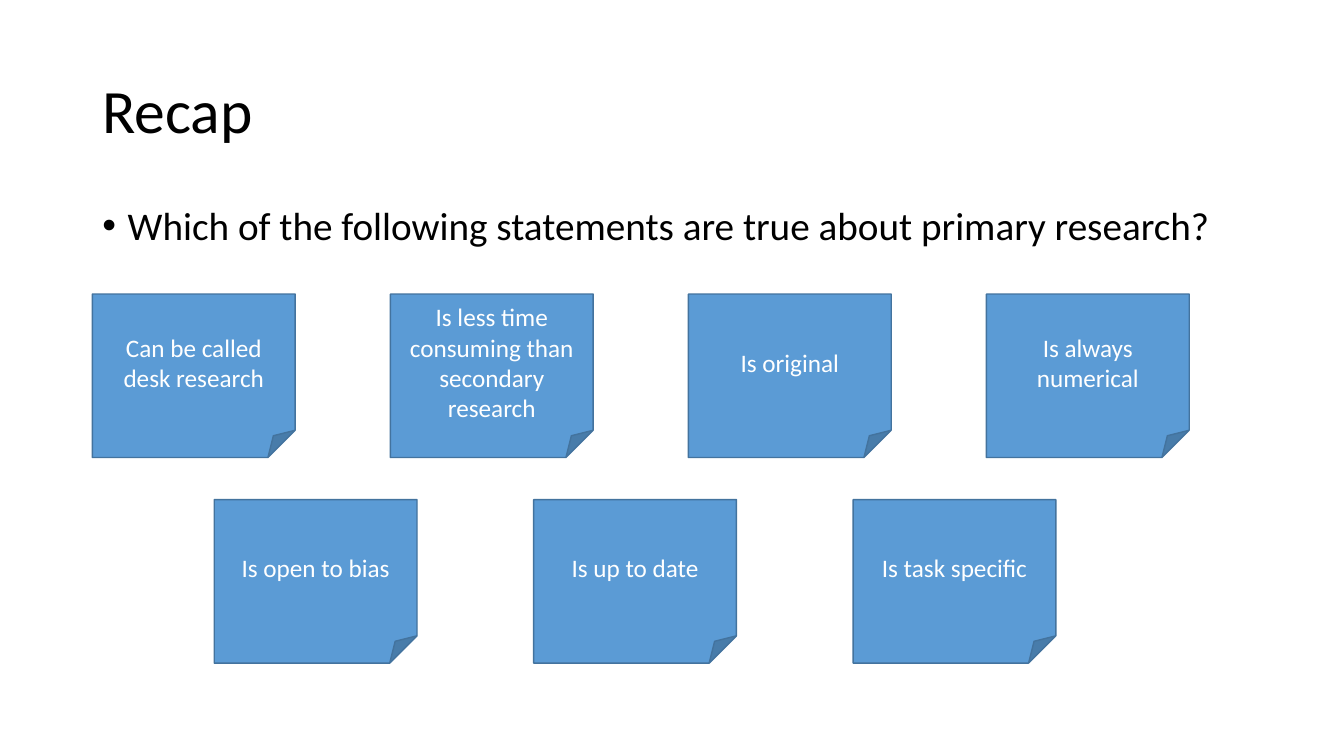
from lxml import etree
from pptx import Presentation
from pptx.dml.color import RGBColor
from pptx.enum import shapes, text
from pptx.oxml.ns import qn
from pptx.util import Cm, Pt

FONT = "Calibri"
BLACK = RGBColor(0x00, 0x00, 0x00)
WHITE = RGBColor(0xFF, 0xFF, 0xFF)
NOTE_BLUE = RGBColor(0x5B, 0x9B, 0xD5)
NOTE_EDGE = RGBColor(0x43, 0x73, 0x9E)

MARGIN = 2.33
CONTENT_WIDTH = 29.21
NOTE_WIDTH, NOTE_HEIGHT = 5.11, 4.12

# Each row: left of first note, top, step between notes, statements
NOTE_ROWS = [
    (MARGIN, 7.41, 7.51, [
        "Can be called desk research",
        "Is less time consuming than secondary research",
        "Is original",
        "Is always numerical",
    ]),
    (5.4, 12.59, 8.05, [
        "Is open to bias",
        "Is up to date",
        "Is task specific",
    ]),
]


def write(frame, wording, size, color):
    frame.word_wrap = True
    paragraph = frame.paragraphs[0]
    paragraph.text = wording
    font = paragraph.runs[0].font
    font.name, font.size, font.color.rgb = FONT, Pt(size), color
    return paragraph


def add_heading(slide, wording, top, height, size, anchor):
    box = slide.shapes.add_textbox(
        Cm(MARGIN), Cm(top), Cm(CONTENT_WIDTH), Cm(height))
    box.text_frame.vertical_anchor = anchor
    paragraph = write(box.text_frame, wording, size, BLACK)
    paragraph.line_spacing = 0.9
    return paragraph


def add_bullet(paragraph):
    properties = paragraph._p.get_or_add_pPr()
    indent = Cm(0.64)
    properties.set("marL", str(indent))
    properties.set("indent", str(-indent))
    etree.SubElement(properties, qn("a:buFont"), typeface="Arial")
    etree.SubElement(properties, qn("a:buChar"), char="•")


def add_note(slide, statement, left, top):
    note = slide.shapes.add_shape(
        shapes.MSO_SHAPE.FOLDED_CORNER,
        Cm(left), Cm(top), Cm(NOTE_WIDTH), Cm(NOTE_HEIGHT))
    note.shadow.inherit = False
    note.fill.solid()
    note.fill.fore_color.rgb = NOTE_BLUE
    note.line.color.rgb = NOTE_EDGE
    note.line.width = Pt(1)
    note.text_frame.vertical_anchor = text.MSO_ANCHOR.MIDDLE
    paragraph = write(note.text_frame, statement, 18, WHITE)
    paragraph.alignment = text.PP_ALIGN.CENTER


def main():
    deck = Presentation()
    deck.slide_width, deck.slide_height = Cm(33.87), Cm(19.05)
    slide = deck.slides.add_slide(deck.slide_layouts[6])

    add_heading(slide, "Recap", 1.02, 3.68, 44, text.MSO_ANCHOR.MIDDLE)
    question = add_heading(
        slide,
        "Which of the following statements are true about primary research?",
        5.08, 1.73, 28, text.MSO_ANCHOR.TOP)
    question.space_before = Pt(10)
    add_bullet(question)

    for first_left, top, step, statements in NOTE_ROWS:
        for column, statement in enumerate(statements):
            add_note(slide, statement, first_left + column * step, top)

    deck.save("out.pptx")


if __name__ == "__main__":
    main()
